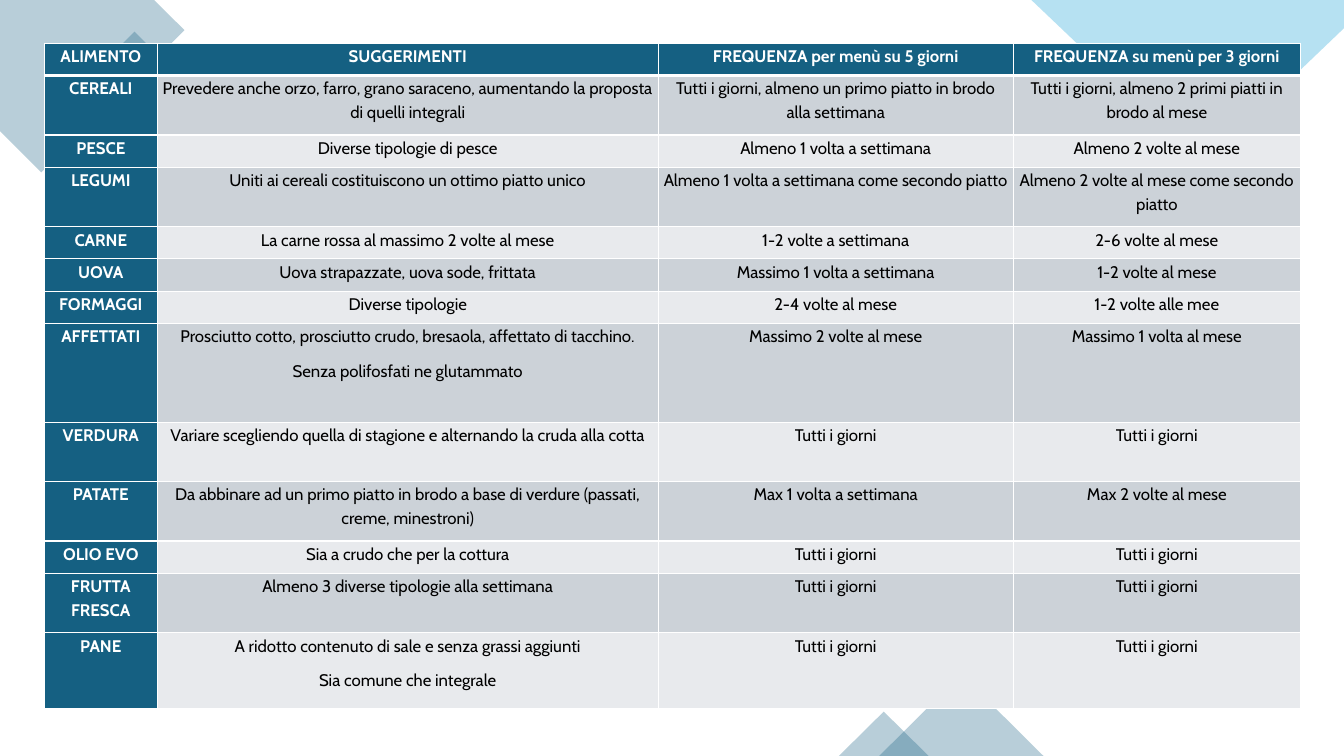
from lxml import etree
from pptx import Presentation
from pptx.dml.color import RGBColor
from pptx.enum import shapes, text
from pptx.oxml import ns
from pptx.util import Pt

PX = 9144
HEX = {"teal": "156082", "sky": "0F9ED5", "dark": "CCD2D8", "pale": "E8EAED",
       "white": "FFFFFF", "black": "000000"}
COLS = [112, 497, 352, 285]
HIGH = [32, 59, 32, 59, 32, 32, 32, 98, 59, 59, 32, 59, 75]
DAILY = "Tutti i giorni"
ROWS = [
    ("ALIMENTO", "SUGGERIMENTI", "FREQUENZA per menù su 5 giorni",
     "FREQUENZA su menù per 3 giorni"),
    ("CEREALI",
     "Prevedere anche orzo, farro, grano saraceno, aumentando la proposta di quelli integrali",
     "Tutti i giorni, almeno un primo piatto in brodo alla settimana",
     "Tutti i giorni, almeno 2 primi piatti in brodo al mese"),
    ("PESCE", "Diverse tipologie di pesce", "Almeno 1 volta a settimana",
     "Almeno 2 volte al mese"),
    ("LEGUMI", "Uniti ai cereali costituiscono un ottimo piatto unico",
     "Almeno 1 volta a settimana come secondo piatto",
     "Almeno 2 volte al mese come secondo piatto"),
    ("CARNE", "La carne rossa al massimo 2 volte al mese",
     "1-2 volte a settimana", "2-6 volte al mese"),
    ("UOVA", "Uova strapazzate, uova sode, frittata",
     "Massimo 1 volta a settimana", "1-2 volte al mese"),
    ("FORMAGGI", "Diverse tipologie", "2-4 volte al mese", "1-2 volte alle mee"),
    ("AFFETTATI",
     "Prosciutto cotto, prosciutto crudo, bresaola, affettato di tacchino.\n"
     "Senza polifosfati ne glutammato",
     "Massimo 2 volte al mese", "Massimo 1 volta al mese"),
    ("VERDURA", "Variare scegliendo quella di stagione e alternando la cruda alla cotta",
     DAILY, DAILY),
    ("PATATE",
     "Da abbinare ad un primo piatto in brodo a base di verdure (passati, creme, minestroni)",
     "Max 1 volta a settimana", "Max 2 volte al mese"),
    ("OLIO EVO", "Sia a crudo che per la cottura", DAILY, DAILY),
    ("FRUTTA FRESCA", "Almeno 3 diverse tipologie alla settimana", DAILY, DAILY),
    ("PANE",
     "A ridotto contenuto di sale e senza grassi aggiunti\nSia comune che integrale",
     DAILY, DAILY),
]


def color(name):
    return RGBColor.from_string(HEX[name])


def tint(shape, name):
    shape.shadow.inherit = False
    shape.line.fill.background()
    shape.fill.solid()
    shape.fill.fore_color.rgb = color(name)
    tone = shape.fill._xPr.find(".//" + ns.qn("a:srgbClr"))
    etree.SubElement(tone, ns.qn("a:alpha"), val="30000")


def outline(slide, points, name):
    pen = slide.shapes.build_freeform(*points[0], scale=PX)
    pen.add_line_segments(points[1:], close=True)
    tint(pen.convert_to_shape(), name)


def preset(slide, kind, box, name, turn=0):
    shape = slide.shapes.add_shape(kind, *[n * PX for n in box])
    shape.rotation = turn
    tint(shape, name)


def border(cell, side, width):
    props = cell._tc.get_or_add_tcPr()
    line = etree.SubElement(props, ns.qn("a:ln" + side), w=str(Pt(width)))
    fill = etree.SubElement(line, ns.qn("a:solidFill"))
    etree.SubElement(fill, ns.qn("a:srgbClr"), val=HEX["white"])


def write(cell, words, head):
    cell.margin_left = cell.margin_right = 4 * PX
    cell.margin_top = cell.margin_bottom = 0
    cell.text_frame.text = words
    for para in cell.text_frame.paragraphs:
        para.alignment = text.PP_ALIGN.CENTER
        para.line_spacing = 1.15
        para.space_after = Pt(8)
        for run in para.runs:
            run.font.name = "Cabin"
            run.font.size = Pt(12)
            run.font.bold = head
            run.font.color.rgb = color("white" if head else "black")


def menu(slide, left, top):
    frame = slide.shapes.add_table(len(ROWS), len(COLS), left * PX, top * PX,
                                   sum(COLS) * PX, sum(HIGH) * PX)
    table = frame.table
    for col, width in zip(table.columns, COLS):
        col.width = width * PX
    for r, row in enumerate(ROWS):
        table.rows[r].height = HIGH[r] * PX
        for c, words in enumerate(row):
            cell = table.cell(r, c)
            head = r == 0 or c == 0
            write(cell, words, head)
            for side in "LRTB":
                thick = (r, side) in ((0, "B"), (1, "T"))
                border(cell, side, 3 if thick else 1)
            cell.fill.solid()
            band = "dark" if r % 2 else "pale"
            cell.fill.fore_color.rgb = color("teal" if head else band)


def main():
    deck = Presentation()
    deck.slide_width, deck.slide_height = 1333 * PX, 750 * PX
    slide = deck.slides.add_slide(deck.slide_layouts[6])
    rect = shapes.MSO_SHAPE.RECTANGLE
    peak = shapes.MSO_SHAPE.ISOSCELES_TRIANGLE
    outline(slide, [(153, 0), (0, 0), (0, 130), (41, 171), (183, 30)], "teal")
    preset(slide, rect, (98, 46, 71, 71), "teal", 315)
    preset(slide, rect, (1098, 72, 75, 75), "sky", 315)
    outline(slide, [(1333, 0), (1023, 0), (1193, 162), (1333, 28)], "sky")
    preset(slide, peak, (872, 669, 163, 81), "teal")
    preset(slide, peak, (832, 706, 89, 44), "teal")
    menu(slide, 44, 43)
    deck.save("out.pptx")


if __name__ == "__main__":
    main()
